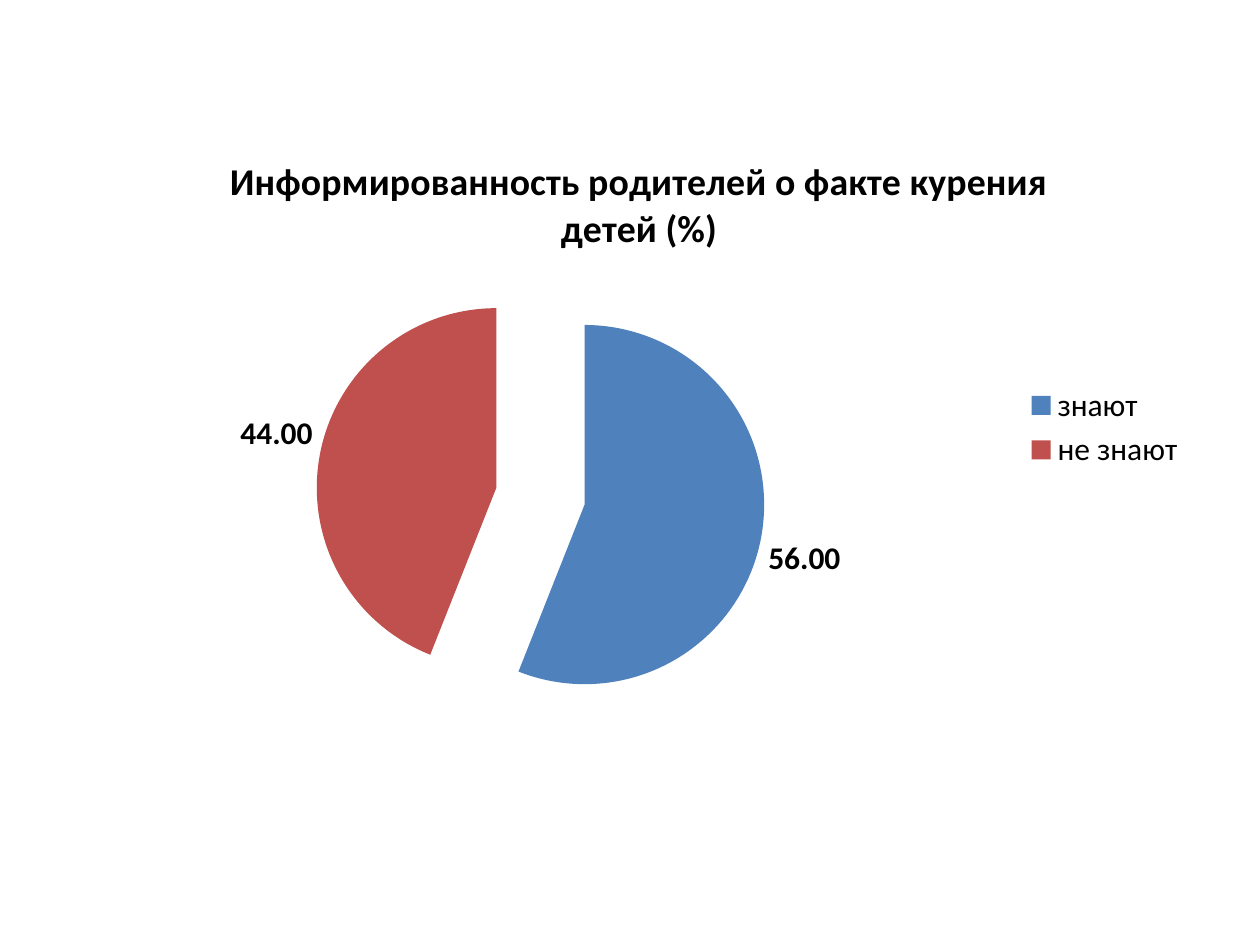
import pptx
import pptx.chart.data
import pptx.dml.color
import pptx.enum.chart
import pptx.oxml
import pptx.oxml.ns
import pptx.util

Pt = pptx.util.Pt
BLACK = pptx.dml.color.RGBColor(0x00, 0x00, 0x00)
BLUE = pptx.dml.color.RGBColor(0x4F, 0x81, 0xBD)
RED = pptx.dml.color.RGBColor(0xC0, 0x50, 0x4D)

BLANK_LAYOUT = 6


class SlideBuilder:
    def __init__(self, slide, font_name="Calibri", font_size=18, color=BLACK):
        self.slide = slide
        self.font_name = font_name
        self.font_size = font_size
        self.color = color

    def format_font(self, font, **changes):
        style = {"name": self.font_name, "size": Pt(self.font_size), "bold": False}
        for name, value in {**style, **changes}.items():
            setattr(font, name, value)
        font.color.rgb = self.color

    def place(self, element, **fractions):
        """Give a chart title or plot area a position in fractions of the chart."""
        modes = {"xMode": "edge", "yMode": "edge"}
        if "w" in fractions:
            modes = {"layoutTarget": "inner", **modes}
        settings = "".join(
            f'<c:{name} val="{value}"/>' for name, value in {**modes, **fractions}.items()
        )
        layout = pptx.oxml.parse_xml(
            f'<c:layout {pptx.oxml.ns.nsdecls("c")}>'
            f"<c:manualLayout>{settings}</c:manualLayout></c:layout>"
        )
        for old_layout in element.findall(pptx.oxml.ns.qn("c:layout")):
            element.remove(old_layout)
        text = element.find(pptx.oxml.ns.qn("c:tx"))
        if text is None:
            element.insert(0, layout)
        else:
            text.addnext(layout)

    def add_pie(self, box, title, values, colors, explosion):
        data = pptx.chart.data.CategoryChartData(number_format="0.00")
        data.categories = list(values)
        data.add_series("Series 1", list(values.values()))
        chart = self.slide.shapes.add_chart(
            pptx.enum.chart.XL_CHART_TYPE.PIE, *map(Pt, box), data
        ).chart
        self.format_font(chart.font)

        chart.has_title = True
        paragraph = chart.chart_title.text_frame.paragraphs[0]
        run = paragraph.add_run()
        run.text = title
        self.format_font(run.font, size=Pt(21.6), bold=True)
        chart.chart_title.include_in_layout = False
        self.place(chart.chart_title._element, x=0.14, y=0.05)

        chart.has_legend = True
        chart.legend.position = pptx.enum.chart.XL_LEGEND_POSITION.RIGHT
        chart.legend.include_in_layout = False
        self.format_font(chart.legend.font)

        plot = chart.plots[0]
        plot.vary_by_categories = True
        self.place(plot._element.getparent(), x=0.22, y=0.25, w=0.4, h=0.72)
        series = plot.series[0]
        for index, color in enumerate(colors):
            fill = series.points[index].format.fill
            fill.solid()
            fill.fore_color.rgb = color
        exploded = pptx.oxml.parse_xml(
            f'<c:explosion {pptx.oxml.ns.nsdecls("c")} val="{explosion}"/>'
        )
        series._element.find(pptx.oxml.ns.qn("c:dPt")).addprevious(exploded)

        labels = series.data_labels
        label_format = {
            "show_value": True,
            "show_percentage": False,
            "number_format": "0.00",
            "number_format_is_linked": False,
            "position": pptx.enum.chart.XL_LABEL_POSITION.OUTSIDE_END,
        }
        for name, value in label_format.items():
            setattr(labels, name, value)
        self.format_font(labels.font, bold=True)


def main():
    presentation = pptx.Presentation()
    presentation.slide_width, presentation.slide_height = Pt(720), Pt(540)
    slide = presentation.slides.add_slide(presentation.slide_layouts[BLANK_LAYOUT])
    SlideBuilder(slide).add_pie(
        box=(36.7, 66.2, 648, 356.4),
        title="Информированность родителей о факте курения детей (%)",
        values={"знают": 56, "не знают": 44},
        colors=(BLUE, RED),
        explosion=25,
    )
    presentation.save("out.pptx")


if __name__ == "__main__":
    main()
